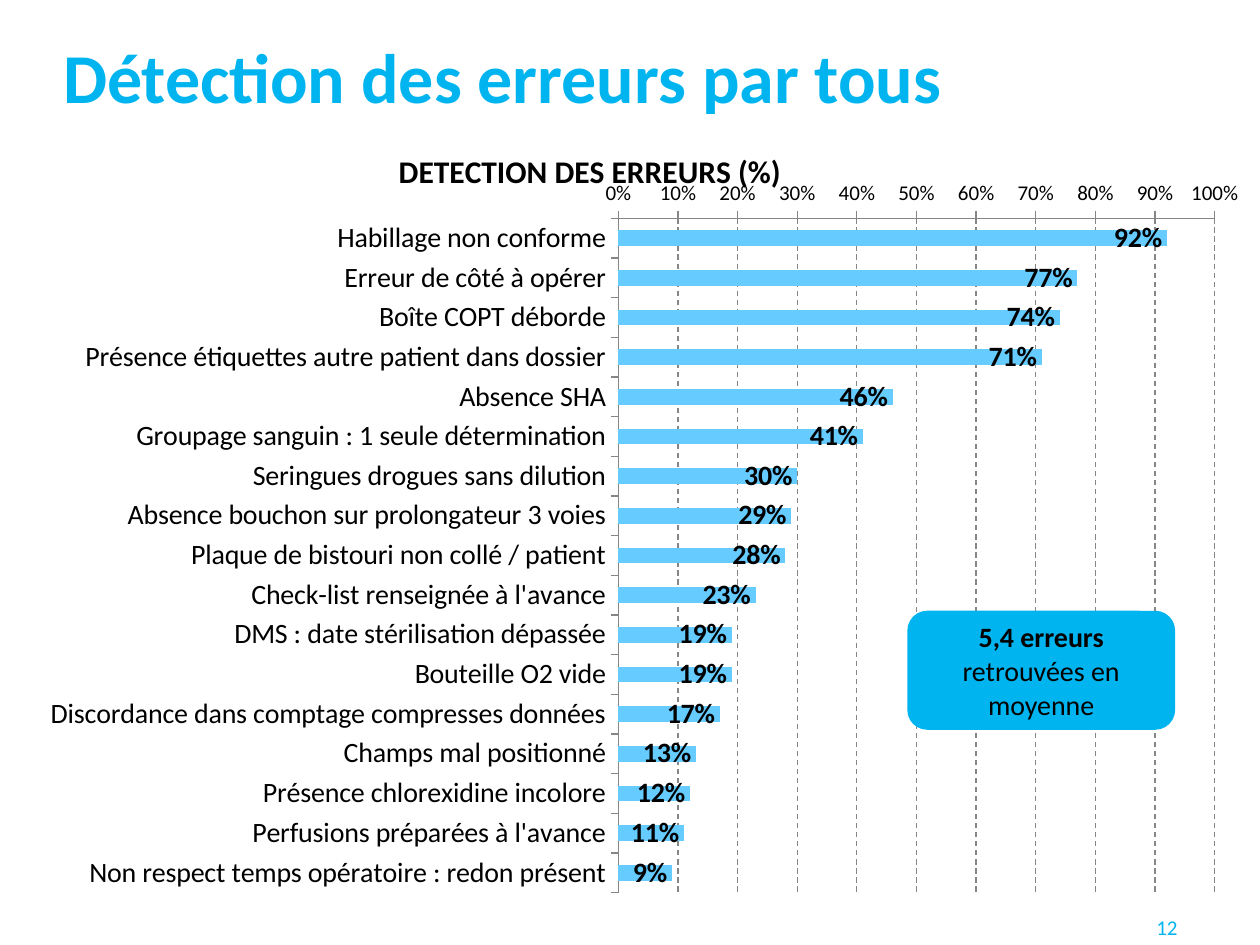
from lxml import etree
from pptx import Presentation
from pptx import util as u
from pptx.chart import data as chart_data
from pptx.dml import color
from pptx.enum import chart as ch, dml, shapes, text
from pptx.oxml import ns

CYAN, SKY, BLACK, GREY = "00B5EF", "66CCFF", "000000", "868686"

DETECTION = {
    "Habillage non conforme": 0.92,
    "Erreur de côté à opérer": 0.77,
    "Boîte COPT déborde": 0.74,
    "Présence étiquettes autre patient dans dossier": 0.71,
    "Absence SHA": 0.46,
    "Groupage sanguin : 1 seule détermination": 0.41,
    "Seringues drogues sans dilution": 0.30,
    "Absence bouchon sur prolongateur 3 voies": 0.29,
    "Plaque de bistouri non collé / patient": 0.28,
    "Check-list renseignée à l'avance": 0.23,
    "DMS : date stérilisation dépassée": 0.19,
    "Bouteille O2 vide": 0.19,
    "Discordance dans comptage compresses données": 0.17,
    "Champs mal positionné": 0.13,
    "Présence chlorexidine incolore": 0.12,
    "Perfusions préparées à l'avance": 0.11,
    "Non respect temps opératoire : redon présent": 0.09,
}


def rgb(value):
    return color.RGBColor.from_string(value)


def style_font(font, size, bold=False, colour=BLACK):
    font.name, font.size, font.bold = "Calibri", u.Pt(size), bold
    font.color.rgb = rgb(colour)


def add_run(paragraph, words, **fmt):
    run = paragraph.add_run()
    run.text = words
    style_font(run.font, **fmt)


def set_layout(parent, index, **values):
    """Fix the place of a chart part, in fractions of the chart."""
    for old in parent.findall(ns.qn("c:layout")):
        parent.remove(old)
    layout = etree.Element(ns.qn("c:layout"))
    manual = etree.SubElement(layout, ns.qn("c:manualLayout"))
    for tag, value in values.items():
        etree.SubElement(manual, ns.qn("c:" + tag)).set("val", str(value))
    parent.insert(index, layout)


class Deck:
    def __init__(self, width, height):
        self.prs = Presentation()
        self.prs.slide_width, self.prs.slide_height = u.Pt(width), u.Pt(height)
        self.slide = self.prs.slides.add_slide(self.prs.slide_layouts[6])

    def text(self, box, words, align=text.PP_ALIGN.LEFT,
             anchor=text.MSO_ANCHOR.TOP, **fmt):
        frame = self.slide.shapes.add_textbox(*map(u.Pt, box)).text_frame
        frame.word_wrap, frame.vertical_anchor = True, anchor
        frame.paragraphs[0].alignment = align
        add_run(frame.paragraphs[0], words, **fmt)
        return frame

    def callout(self, box, runs, fill):
        card = self.slide.shapes.add_shape(
            shapes.MSO_SHAPE.ROUNDED_RECTANGLE, *map(u.Pt, box))
        card.shadow.inherit = False
        card.fill.solid()
        card.fill.fore_color.rgb = rgb(fill)
        card.line.fill.background()
        frame = card.text_frame
        frame.word_wrap, frame.vertical_anchor = True, text.MSO_ANCHOR.MIDDLE
        frame.paragraphs[0].alignment = text.PP_ALIGN.CENTER
        for words, bold in runs:
            add_run(frame.paragraphs[0], words, size=16, bold=bold)

    def bars(self, box, heading, rates, fill):
        source = chart_data.CategoryChartData(number_format="0%")
        source.categories = list(rates)
        source.add_series("Détection", list(rates.values()))
        chart = self.slide.shapes.add_chart(
            ch.XL_CHART_TYPE.BAR_STACKED, *map(u.Pt, box), source).chart
        style_font(chart.font, 10)
        chart.has_legend = False

        # Heading and plot area
        chart.has_title = True
        add_run(chart.chart_title.text_frame.paragraphs[0], heading,
                size=18, bold=True)
        title = chart.chart_title._element
        set_layout(title, 1, xMode="edge", yMode="edge", x=0.36, y=0.035)
        plot_area = chart._chartSpace.chart.plotArea
        set_layout(plot_area, 0, layoutTarget="inner", xMode="edge",
                   yMode="edge", x=0.523, y=0.129, w=0.431, h=0.845)

        # Bars and their labels
        plot = chart.plots[0]
        plot.gap_width, plot.overlap, plot.vary_by_categories = 150, 100, False
        series = plot.series[0]
        series.format.fill.solid()
        series.format.fill.fore_color.rgb = rgb(fill)
        labels = series.data_labels
        labels.show_value = True
        labels.number_format, labels.number_format_is_linked = "0%", False
        labels.position = ch.XL_LABEL_POSITION.INSIDE_END
        style_font(labels.font, 16, bold=True)

        # Axes
        causes, percent = chart.category_axis, chart.value_axis
        for axis, size in ((causes, 16), (percent, 12)):
            axis.major_tick_mark = ch.XL_TICK_MARK.OUTSIDE
            axis.format.line.color.rgb = rgb(GREY)
            axis.format.line.width = u.Pt(0.75)
            style_font(axis.tick_labels.font, size)
        causes.reverse_order = True
        causes.has_major_gridlines = False
        percent.minimum_scale, percent.maximum_scale = 0, 1
        percent.major_unit = 0.1
        percent.tick_labels.number_format = "0%"
        percent.tick_labels.number_format_is_linked = False
        percent.has_major_gridlines = True
        grid = percent.major_gridlines.format.line
        grid.color.rgb, grid.width = rgb(GREY), u.Pt(0.75)
        grid.dash_style = dml.MSO_LINE.DASH


def main():
    deck = Deck(720, 540)

    # Title and page number
    title = deck.text((20, 9.5, 686, 67), "Détection des erreurs par tous",
                      anchor=text.MSO_ANCHOR.MIDDLE,
                      size=40, bold=True, colour=CYAN)
    title.margin_left = u.Pt(16)
    deck.text((638, 519, 42, 23), "12", align=text.PP_ALIGN.RIGHT,
              size=12, colour=CYAN)

    # Detection rate of each error
    deck.bars((-60, 66, 790.5, 456), "DETECTION DES ERREURS (%)",
              DETECTION, SKY)

    # Mean result
    deck.callout((518.5, 349, 153, 68),
                 [("5,4 erreurs ", True), ("retrouvées en moyenne", False)],
                 CYAN)

    deck.prs.save("out.pptx")


if __name__ == "__main__":
    main()
